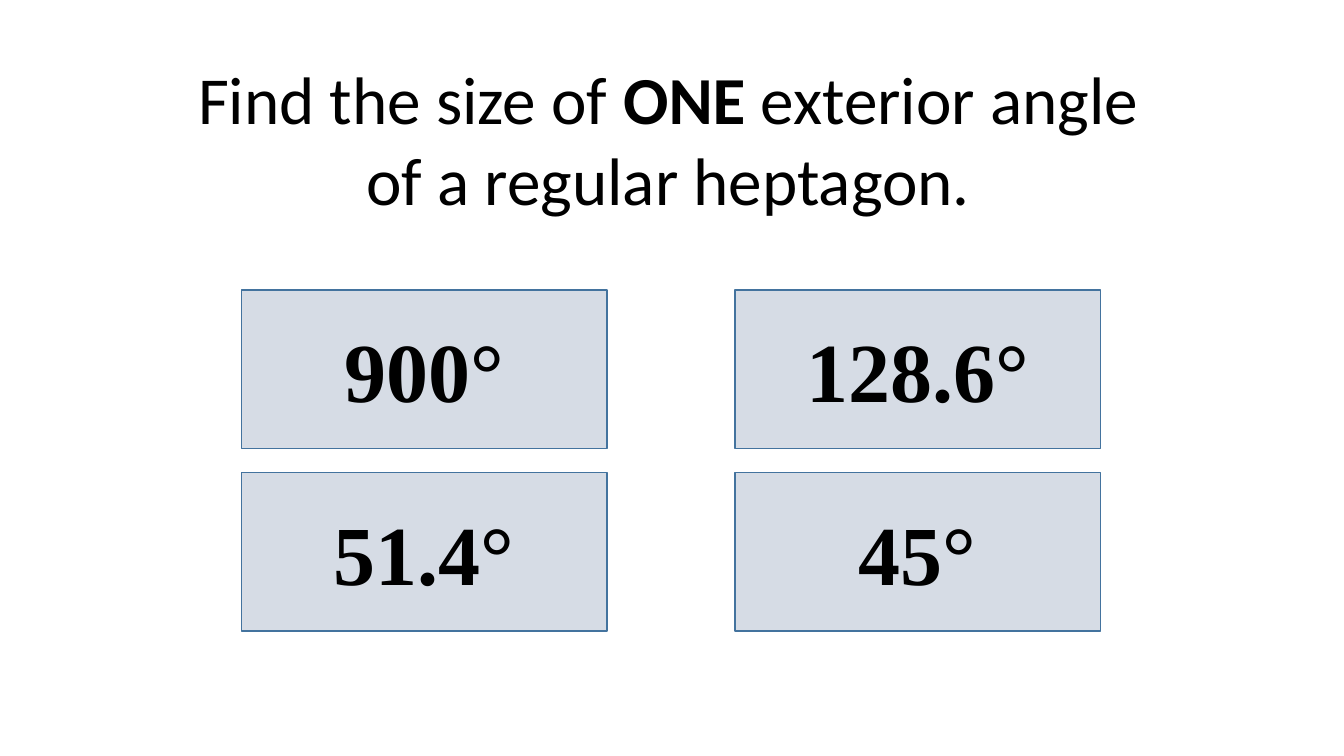
from pptx import Presentation, util as u
from pptx.dml import color
from pptx.enum import shapes, text

PX = 9525  # EMU per px, 96 px to the inch
SLIDE_SIZE = (1280, 720)
QUESTION_BOX = (179, 50, 915, 165)
CARD_LEFT, CARD_TOP = 230, 276
CARD_WIDTH, CARD_HEIGHT = 348, 151
COLUMN_STEP, ROW_STEP = 470, 174

QUESTION = [
    ("Find the size of ", False),
    ("ONE", True),
    (" exterior angle of a regular heptagon.", False),
]
ANSWERS = [["900°", "128.6°"], ["51.4°", "45°"]]
QUESTION_FORMAT = {"name": "Calibri", "size": u.Pt(48)}
ANSWER_FORMAT = {"name": "Times New Roman", "size": u.Pt(60), "bold": True}


def px(*lengths):
    return [u.Emu(length * PX) for length in lengths]


def set_color(target, hex_color):
    target.rgb = color.RGBColor.from_string(hex_color)


def add_run(paragraph, wording, font_format):
    run = paragraph.add_run()
    run.text = wording
    for name, value in font_format.items():
        setattr(run.font, name, value)
    set_color(run.font.color, "000000")


def add_question(slide):
    frame = slide.shapes.add_textbox(*px(*QUESTION_BOX)).text_frame
    frame.word_wrap = True
    frame.auto_size = text.MSO_AUTO_SIZE.SHAPE_TO_FIT_TEXT
    paragraph = frame.paragraphs[0]
    paragraph.alignment = text.PP_ALIGN.CENTER
    for wording, bold in QUESTION:
        add_run(paragraph, wording, {**QUESTION_FORMAT, "bold": bold})


def add_answer_card(slide, left, top, answer):
    shape = slide.shapes.add_shape(
        shapes.MSO_SHAPE.RECTANGLE, *px(left, top, CARD_WIDTH, CARD_HEIGHT))
    shape.shadow.inherit = False
    shape.fill.solid()
    set_color(shape.fill.fore_color, "D6DCE5")
    set_color(shape.line.color, "43739E")
    shape.line.width = u.Pt(1)
    frame = shape.text_frame
    frame.vertical_anchor = text.MSO_ANCHOR.MIDDLE
    paragraph = frame.paragraphs[0]
    paragraph.alignment = text.PP_ALIGN.CENTER
    add_run(paragraph, answer, ANSWER_FORMAT)


def main():
    presentation = Presentation()
    presentation.slide_width, presentation.slide_height = px(*SLIDE_SIZE)
    slide = presentation.slides.add_slide(presentation.slide_layouts[6])
    add_question(slide)
    for row, answers in enumerate(ANSWERS):
        for column, answer in enumerate(answers):
            add_answer_card(slide, CARD_LEFT + column * COLUMN_STEP,
                            CARD_TOP + row * ROW_STEP, answer)
    presentation.save("out.pptx")


if __name__ == "__main__":
    main()
